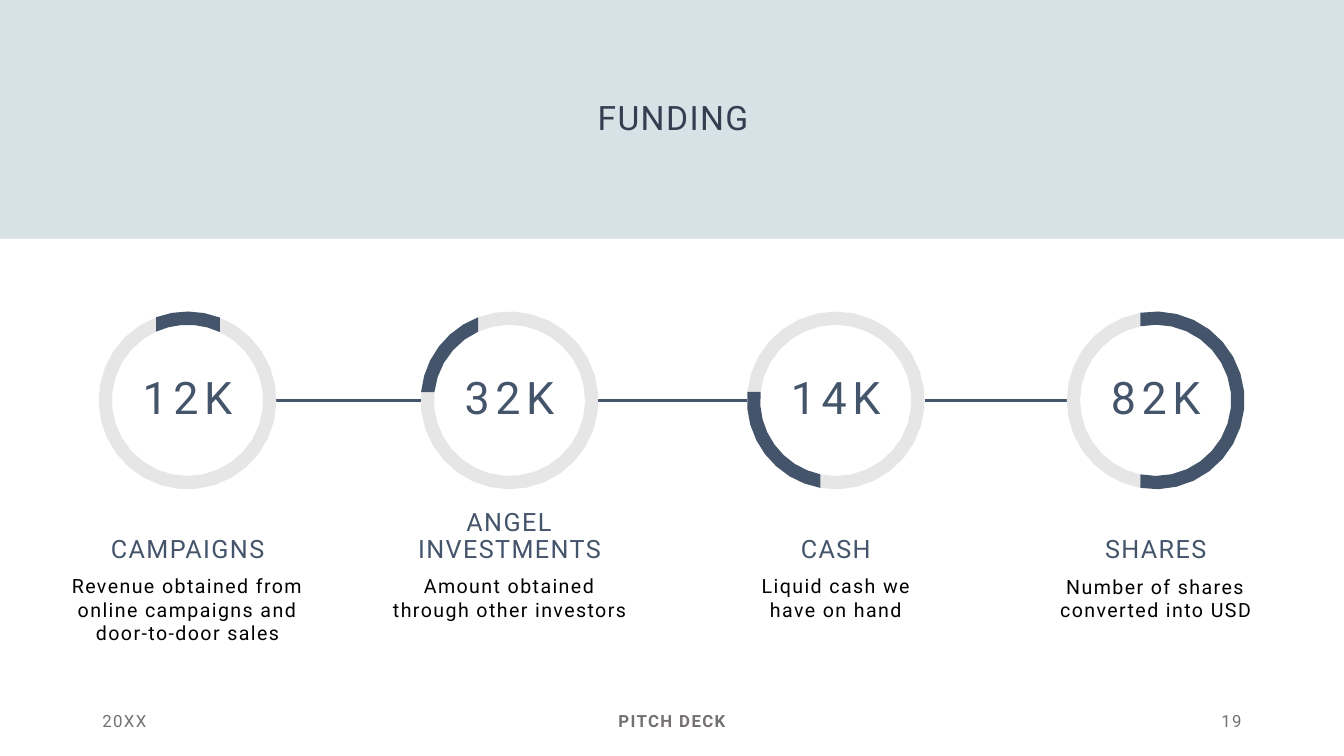
from dataclasses import dataclass
from enum import Enum
from itertools import pairwise
from math import asin, ceil, cos, pi, sin

from lxml.etree import SubElement
from pptx import Presentation
from pptx.dml.color import RGBColor
from pptx.enum.shapes import MSO_CONNECTOR, MSO_SHAPE
from pptx.enum.text import MSO_ANCHOR as Anchor, PP_ALIGN as Align
from pptx.oxml.ns import qn
from pptx.shapes.shapetree import SlideShapes
from pptx.util import Pt

PX = 6350
WIDTH, HEIGHT = 1920, 1080
BANNER_HEIGHT = 341

PALE_BLUE = RGBColor(0xD7, 0xE2, 0xE7)
SLATE = RGBColor(0x44, 0x54, 0x6A)
NAVY = RGBColor(0x33, 0x3F, 0x50)
LIGHT_GREY = RGBColor(0xE7, 0xE6, 0xE6)
GREY = RGBColor(0x76, 0x71, 0x71)
BLACK = RGBColor(0, 0, 0)

RING_Y, OUTER, INNER = 572, 127, 108
ARC_STEP = pi / 15
VALUE_WIDTH, VALUE_HEIGHT = 190, 182
CAPTION_WIDTH = 374
HEADING_TOP, HEADING_HEIGHT = 714, 99
DETAIL_HEIGHT = 143
FOOTER_TOP, FOOTER_HEIGHT = 1001, 58


class Side(Enum):
    TOP = (0, 1)
    BOTTOM = (pi, -1)
    LEFT = (1.5 * pi, -1)


@dataclass(frozen=True)
class Cut:
    side: Side
    offset: int

    def angle(self, radius: int) -> float:
        base, sign = self.side.value
        return base + sign * asin(self.offset / radius)


@dataclass(frozen=True)
class Source:
    x: int
    value: str
    heading: str
    detail: str
    start: Cut
    end: Cut
    detail_top: int = 813


@dataclass(frozen=True)
class Style:
    size: int
    color: RGBColor
    align: Align = Align.CENTER
    anchor: Anchor = Anchor.MIDDLE
    line_spacing: float = 1.0
    space_before: int = 0
    bold: bool = False
    tracking: int = 100


@dataclass(frozen=True)
class FooterItem:
    left: int
    width: int
    text: str
    style: Style


TITLE = Style(24, NAVY, line_spacing=0.9)
VALUE = Style(32, SLATE, line_spacing=0.7, tracking=400)
HEADING = Style(18, SLATE, anchor=Anchor.BOTTOM, line_spacing=0.9, space_before=10)
DETAIL = Style(14, BLACK, anchor=Anchor.TOP)

SOURCES = [
    Source(268, "12K", "CAMPAIGNS",
           "Revenue obtained from online campaigns and door-to-door sales",
           Cut(Side.TOP, -45), Cut(Side.TOP, 46)),
    Source(728, "32K", "ANGEL INVESTMENTS",
           "Amount obtained through other investors",
           Cut(Side.LEFT, -12), Cut(Side.TOP, -45)),
    Source(1194, "14K", "CASH", "Liquid cash we\nhave on hand",
           Cut(Side.BOTTOM, -22), Cut(Side.LEFT, -12)),
    Source(1651, "82K", "SHARES", "Number of shares converted into USD",
           Cut(Side.TOP, -22), Cut(Side.BOTTOM, -22), detail_top=814),
]

FOOTER = [
    FooterItem(132, 432, "20XX", Style(12, GREY, Align.LEFT)),
    FooterItem(636, 648, "PITCH DECK", Style(12, GREY, bold=True)),
    FooterItem(1356, 432, "19", Style(12, GREY, Align.RIGHT)),
]


def add_text(shapes: SlideShapes, left: int, top: int, width: int, height: int,
             text: str, style: Style) -> None:
    frame = shapes.add_textbox(left * PX, top * PX, width * PX, height * PX).text_frame
    frame.word_wrap = True
    frame.vertical_anchor = style.anchor
    frame.text = text
    paragraph_format = {
        "alignment": style.align,
        "line_spacing": style.line_spacing,
        "space_before": Pt(style.space_before),
    }
    font_format = {"name": "Roboto", "size": Pt(style.size), "bold": style.bold}
    for paragraph in frame.paragraphs:
        for key, setting in paragraph_format.items():
            setattr(paragraph, key, setting)
        for run in paragraph.runs:
            for key, setting in font_format.items():
                setattr(run.font, key, setting)
            run.font.color.rgb = style.color
            run._r.get_or_add_rPr().set("spc", str(style.tracking))


def arc_points(x: int, radius: int, start: Cut, end: Cut) -> list[tuple[float, float]]:
    first = start.angle(radius)
    sweep = (end.angle(radius) - first) % (2 * pi)
    steps = ceil(sweep / ARC_STEP)
    angles = [first + sweep * step / steps for step in range(steps + 1)]
    return [((x + radius * sin(a)) * PX, (RING_Y - radius * cos(a)) * PX) for a in angles]


def add_band(shapes: SlideShapes, x: int, start: Cut, end: Cut, color: RGBColor) -> None:
    outline = arc_points(x, OUTER, start, end) + arc_points(x, INNER, start, end)[::-1]
    builder = shapes.build_freeform(*outline[0])
    builder.add_line_segments(outline[1:], close=True)
    band = builder.convert_to_shape()
    band.shadow.inherit = False
    band.fill.solid()
    band.fill.fore_color.rgb = color
    band.line.fill.background()


def add_link(shapes: SlideShapes, before: Source, after: Source) -> None:
    link = shapes.add_connector(MSO_CONNECTOR.STRAIGHT, (before.x + OUTER) * PX, RING_Y * PX,
                                (after.x - OUTER) * PX, RING_Y * PX)
    link.line.color.rgb = SLATE
    link.line.width = Pt(2.25)
    SubElement(link._element.spPr, qn("a:effectLst"))


def add_source(shapes: SlideShapes, source: Source) -> None:
    add_band(shapes, source.x, source.end, source.start, LIGHT_GREY)
    add_band(shapes, source.x, source.start, source.end, SLATE)
    add_text(shapes, source.x - VALUE_WIDTH // 2, RING_Y - VALUE_HEIGHT // 2 + 4,
             VALUE_WIDTH, VALUE_HEIGHT, source.value, VALUE)
    caption_left = source.x - CAPTION_WIDTH // 2
    add_text(shapes, caption_left, HEADING_TOP, CAPTION_WIDTH, HEADING_HEIGHT,
             source.heading, HEADING)
    add_text(shapes, caption_left, source.detail_top, CAPTION_WIDTH, DETAIL_HEIGHT,
             source.detail, DETAIL)


def main() -> None:
    deck = Presentation()
    deck.slide_width, deck.slide_height = WIDTH * PX, HEIGHT * PX
    shapes = deck.slides.add_slide(deck.slide_layouts[6]).shapes

    banner = shapes.add_shape(MSO_SHAPE.RECTANGLE, 0, 0, WIDTH * PX, BANNER_HEIGHT * PX)
    banner.shadow.inherit = False
    banner.fill.solid()
    banner.fill.fore_color.rgb = PALE_BLUE
    banner.line.fill.background()

    for before, after in pairwise(SOURCES):
        add_link(shapes, before, after)
    add_text(shapes, 636, 97, 651, 148, "FUNDING", TITLE)
    for source in SOURCES:
        add_source(shapes, source)
    for item in FOOTER:
        add_text(shapes, item.left, FOOTER_TOP, item.width, FOOTER_HEIGHT,
                 item.text, item.style)
    deck.save("out.pptx")


if __name__ == "__main__":
    main()
